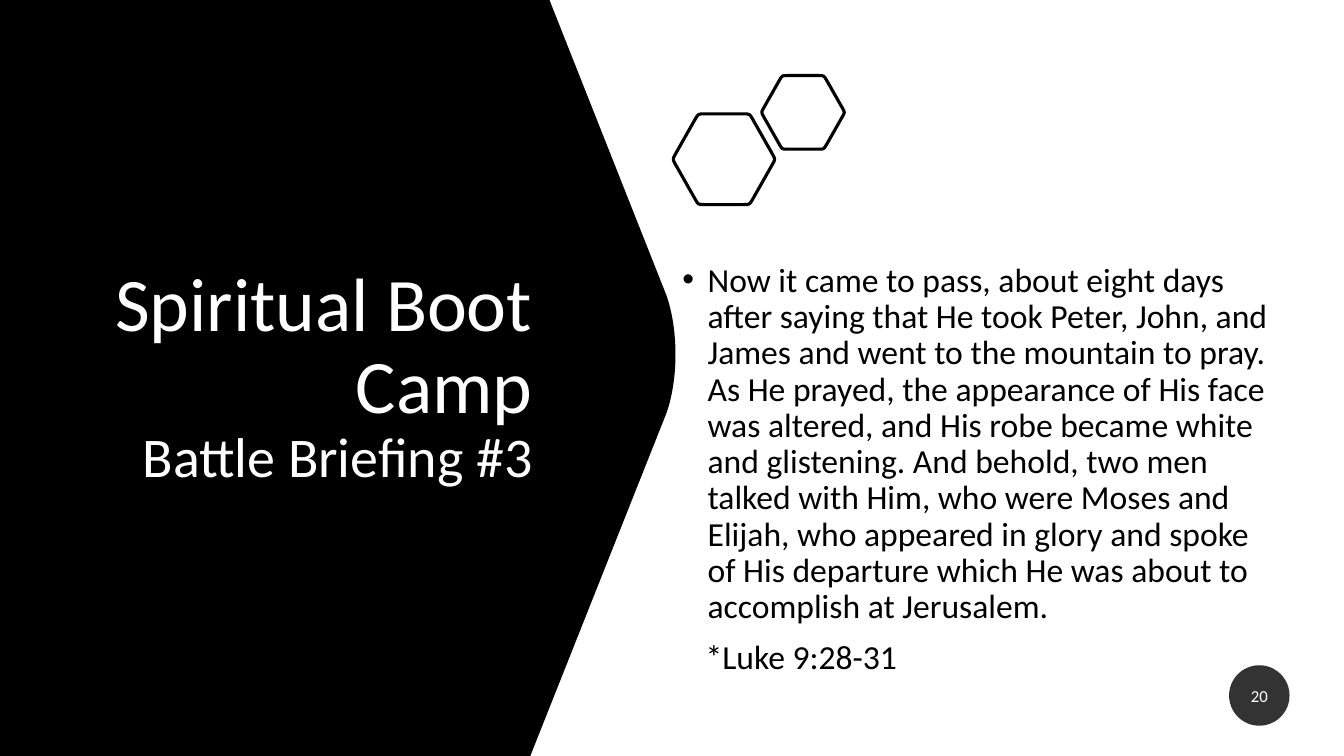
from lxml.etree import Element, SubElement
from pptx import Presentation
from pptx.dml.color import RGBColor
from pptx.enum.shapes import MSO_SHAPE
from pptx.enum.text import MSO_ANCHOR, PP_ALIGN
from pptx.oxml.ns import qn
from pptx.util import Inches, Pt

BLACK = RGBColor(0, 0, 0)
WHITE = RGBColor(255, 255, 255)

TITLE = "Spiritual Boot Camp\vBattle Briefing #3"
VERSE = (
    "Now it came to pass, about eight days after saying that He took Peter, John, "
    "and James and went to the mountain to pray. As He prayed, the appearance of His "
    "face was altered, and His robe became white and glistening. And behold, two men "
    "talked with Him, who were Moses and Elijah, who appeared in glory and spoke of "
    "His departure which He was about to accomplish at Jerusalem."
)
CITATION = "*Luke 9:28-31"

ARROW_PANEL = (
    [(0, 0)],
    [(5.45, 0)],
    [(6.61, 2.93)],
    [(6.67, 3.1), (6.7, 3.31), (6.7, 3.52)],
    [(6.7, 3.72), (6.67, 3.93), (6.61, 4.1)],
    [(5.26, 7.5)],
    [(0, 7.5)],
)


def rounded_hexagon(left, top, width, height, cut):
    """Return the segments of a flat-topped hexagon with rounded corners."""
    fractions = ((0.25, 0), (0.75, 0), (1, 0.5), (0.75, 1), (0.25, 1), (0, 0.5))
    corners = [(left + fx * width, top + fy * height) for fx, fy in fractions]
    share = cut / (width / 2)
    segments = []
    for index, corner in enumerate(corners):
        start, end = (
            tuple(c + share * (n - c) for c, n in zip(corner, neighbour))
            for neighbour in (corners[index - 1], corners[(index + 1) % 6])
        )
        segments += [[start], [corner, corner, end]]
    return segments


class SlidePainter:
    """Draws elements in one style on the current slide."""

    font = "Calibri"

    def __init__(self, slide):
        self.slide = slide

    def outline(self, segments, fill=None, line=None):
        """Draw a closed freeform; a segment of three points is a Bezier curve."""
        points = [(Inches(x), Inches(y)) for segment in segments for x, y in segment]
        builder = self.slide.shapes.build_freeform(*points[0], scale=1.0)
        builder.add_line_segments(points[1:], close=True)
        shape = builder.convert_to_shape()
        strokes = iter(list(shape._element.iter(qn("a:lnTo"))))
        for segment in segments[1:]:
            parts = [next(strokes) for _ in segment]
            if len(parts) == 3:
                bend = Element(qn("a:cubicBezTo"))
                parts[0].addprevious(bend)
                for part in parts:
                    bend.append(part[0])
                    part.getparent().remove(part)
        shape.shadow.inherit = False
        if fill is None:
            shape.fill.background()
        else:
            shape.fill.solid()
            shape.fill.fore_color.rgb = fill
        if line is None:
            shape.line.fill.background()
        else:
            shape.line.color.rgb = line
            shape.line.width = Pt(2.25)

    def style(self, paragraph, sizes, color):
        """Format the runs of a paragraph, one size per run."""
        for run, size in zip(paragraph.runs, sizes):
            run.font.name = self.font
            run.font.size = Pt(size)
            run.font.color.rgb = color

    def text_area(self, left, top, width, height):
        """Add a wrapping, vertically centred text box and return its frame."""
        box = self.slide.shapes.add_textbox(*map(Inches, (left, top, width, height)))
        frame = box.text_frame
        frame.word_wrap = True
        frame.vertical_anchor = MSO_ANCHOR.MIDDLE
        return frame

    def title(self, text, area, sizes):
        """Add the right-aligned title."""
        frame = self.text_area(*area)
        frame.text = text
        heading = frame.paragraphs[0]
        heading.alignment = PP_ALIGN.RIGHT
        heading.line_spacing = 0.9
        self.style(heading, sizes, WHITE)

    def passage(self, verse, citation, area):
        """Add a bulleted verse followed by its indented citation."""
        frame = self.text_area(*area)
        frame.text = f"{verse}\n{citation}"
        indents = ((0.25, -0.25), (0.23, 0))
        for paragraph, (margin, first_line) in zip(frame.paragraphs, indents):
            paragraph.line_spacing = 0.9
            paragraph.space_before = Pt(10)
            self.style(paragraph, [24], BLACK)
            properties = paragraph._p.get_or_add_pPr()
            properties.set("marL", str(Inches(margin)))
            properties.set("indent", str(Inches(first_line)))
            if first_line:
                SubElement(properties, qn("a:buFont")).set("typeface", "Arial")
                SubElement(properties, qn("a:buChar")).set("char", "•")

    def page_badge(self, number, left, top, diameter):
        """Add the page number in a slightly transparent circle."""
        badge = self.slide.shapes.add_shape(
            MSO_SHAPE.OVAL, *map(Inches, (left, top, diameter, diameter))
        )
        badge.shadow.inherit = False
        badge.fill.solid()
        badge.fill.fore_color.rgb = BLACK
        tint = badge._element.spPr.find(f"{qn('a:solidFill')}/{qn('a:srgbClr')}")
        SubElement(tint, qn("a:alpha")).set("val", "80000")
        badge.line.fill.background()
        frame = badge.text_frame
        frame.text = number
        frame.vertical_anchor = MSO_ANCHOR.MIDDLE
        label = frame.paragraphs[0]
        label.alignment = PP_ALIGN.CENTER
        label.space_after = Pt(6)
        self.style(label, [12], WHITE)


def main():
    """Build and save the slide."""
    deck = Presentation()
    deck.slide_width, deck.slide_height = Inches(13.33), Inches(7.5)
    painter = SlidePainter(deck.slides.add_slide(deck.slide_layouts[6]))

    painter.outline(ARROW_PANEL, fill=BLACK)
    painter.title(TITLE, (0.84, 1.41, 4.54, 4.68), (54, 40))
    for hexagon in ((6.67, 1.13, 1.02, 0.9, 0.06), (7.55, 0.75, 0.83, 0.73, 0.05)):
        painter.outline(rounded_hexagon(*hexagon), line=BLACK)
    painter.passage(VERSE, CITATION, (6.67, 2.02, 6.1, 5.28))
    painter.page_badge("20", 12.19, 6.6, 0.6)

    deck.save("out.pptx")


if __name__ == "__main__":
    main()
